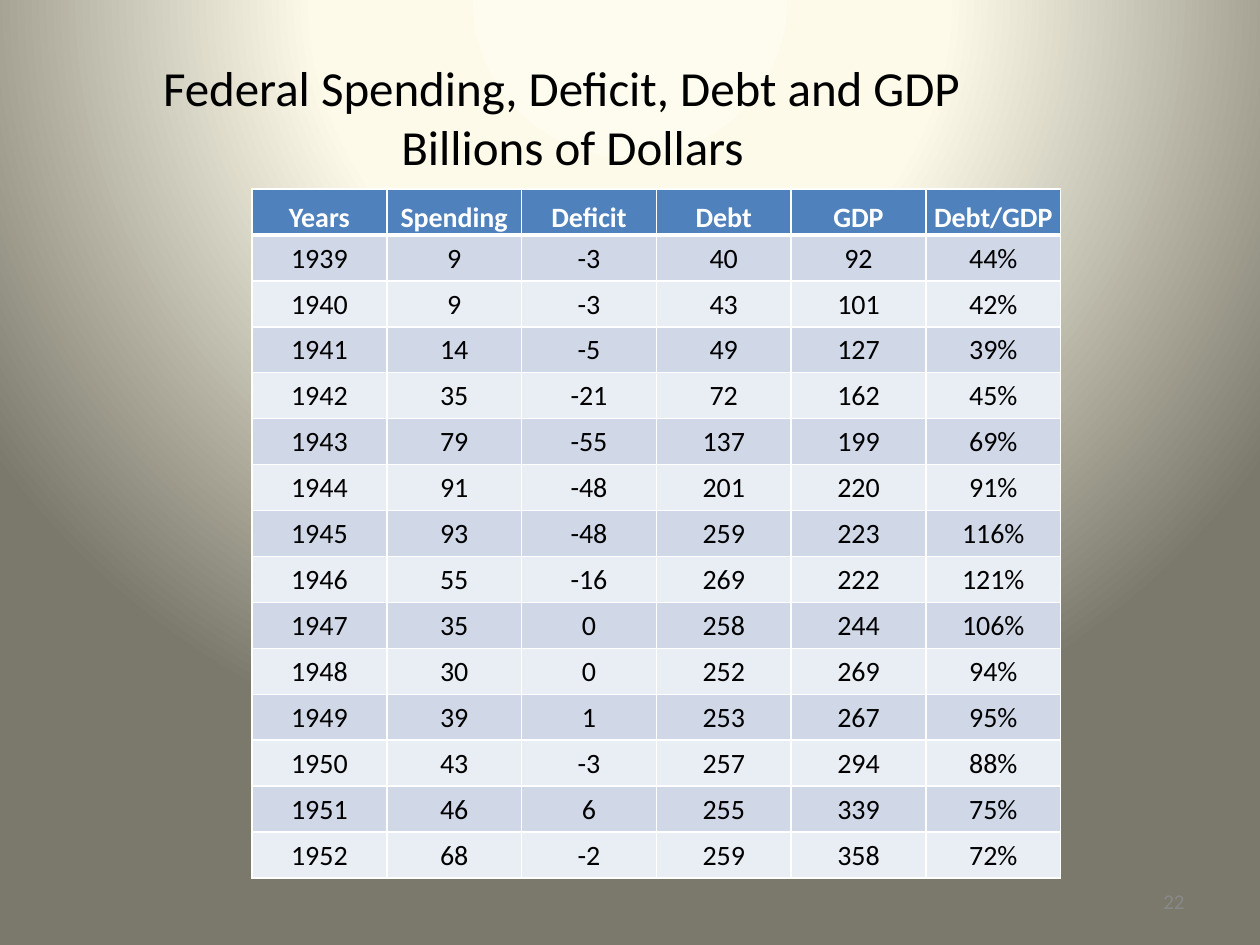
from lxml.etree import SubElement
from pptx import Presentation
from pptx.dml.color import RGBColor
from pptx.enum.text import MSO_ANCHOR, PP_ALIGN
from pptx.oxml import parse_xml
from pptx.oxml.ns import nsdecls, qn
from pptx.util import Inches, Pt

FONT = "Calibri"
COLORS = {
    "text": "000000",
    "header_text": "FFFFFF",
    "header": "4F81BD",
    "band_dark": "D0D8E8",
    "band_light": "E9EDF4",
    "border": "FFFFFF",
    "page_number": "898989",
    "glow": "FEFCEE",
    "glow_edge": "FDFAEA",
    "backdrop": "7B796B",
}
GRADIENT = [(0, "glow"), (40, "glow_edge"), (100, "backdrop")]
TITLE = "Federal Spending, Deficit, Debt and GDP \v Billions of Dollars"
HEADINGS = ["Years", "Spending", "Deficit", "Debt", "GDP", "Debt/GDP"]
BUDGET = [
    (1939, 9, -3, 40, 92, "44%"),
    (1940, 9, -3, 43, 101, "42%"),
    (1941, 14, -5, 49, 127, "39%"),
    (1942, 35, -21, 72, 162, "45%"),
    (1943, 79, -55, 137, 199, "69%"),
    (1944, 91, -48, 201, 220, "91%"),
    (1945, 93, -48, 259, 223, "116%"),
    (1946, 55, -16, 269, 222, "121%"),
    (1947, 35, 0, 258, 244, "106%"),
    (1948, 30, 0, 252, 269, "94%"),
    (1949, 39, 1, 253, 267, "95%"),
    (1950, 43, -3, 257, 294, "88%"),
    (1951, 46, 6, 255, 339, "75%"),
    (1952, 68, -2, 259, 358, "72%"),
]


def rgb(color):
    return RGBColor.from_string(COLORS[color])


def format_text(frame, size, color, align=PP_ALIGN.CENTER, bold=False):
    for paragraph in frame.paragraphs:
        paragraph.alignment = align
        for run in paragraph.runs:
            run.font.name = FONT
            run.font.size = Pt(size)
            run.font.bold = bold
            run.font.color.rgb = rgb(color)


def set_background(slide):
    slide.background.fill.solid()
    backdrop = slide.element.find(".//" + qn("p:bgPr"))
    stops = "".join(
        f'<a:gs pos="{position * 1000}"><a:srgbClr val="{COLORS[color]}"/></a:gs>'
        for position, color in GRADIENT
    )
    gradient = parse_xml(
        f'<a:gradFill {nsdecls("a")} rotWithShape="1"><a:gsLst>{stops}</a:gsLst>'
        '<a:path path="circle">'
        '<a:fillToRect l="50000" t="-80000" r="50000" b="180000"/>'
        "</a:path></a:gradFill>"
    )
    backdrop.replace(backdrop.find(qn("a:solidFill")), gradient)


def add_title(slide):
    title = slide.shapes.title
    title.left, title.top = Inches(0), Inches(0.3)
    title.width, title.height = Inches(9), Inches(1.25)
    title.text_frame.text = TITLE
    title.text_frame.vertical_anchor = MSO_ANCHOR.MIDDLE
    format_text(title.text_frame, 28, "text")


def set_borders(cell, top, bottom):
    properties = cell._tc.get_or_add_tcPr()
    for side, width in (("L", 1), ("R", 1), ("T", top), ("B", bottom)):
        line = SubElement(properties, qn(f"a:ln{side}"), w=str(Pt(width)))
        fill = SubElement(line, qn("a:solidFill"))
        SubElement(fill, qn("a:srgbClr"), val=COLORS["border"])


def fill_cell(cell, value, row):
    is_header = row == 0
    cell.text_frame.text = str(value)
    cell.margin_left = cell.margin_right = cell.margin_top = Inches(0.01)
    cell.margin_bottom = 0
    cell.vertical_anchor = MSO_ANCHOR.BOTTOM if is_header else MSO_ANCHOR.MIDDLE
    text_color = "header_text" if is_header else "text"
    format_text(cell.text_frame, 16, text_color, bold=is_header)
    set_borders(cell, top=3 if row == 1 else 1, bottom=3 if is_header else 1)
    band = "band_dark" if row % 2 else "band_light"
    cell.fill.solid()
    cell.fill.fore_color.rgb = rgb("header" if is_header else band)


def add_budget_table(slide):
    rows = [HEADINGS, *BUDGET]
    width, height = Inches(6.42), Inches(5.47)
    table = slide.shapes.add_table(
        len(rows), len(HEADINGS), Inches(2), Inches(1.5), width, height
    ).table
    for column in table.columns:
        column.width = width // len(HEADINGS)
    for row, values in enumerate(rows):
        table.rows[row].height = height // len(rows)
        for column, value in enumerate(values):
            fill_cell(table.cell(row, column), value, row)


def add_page_number(slide):
    page_number = slide.shapes.add_textbox(
        Inches(7.17), Inches(6.95), Inches(2.33), Inches(0.4)
    )
    frame = page_number.text_frame
    frame.word_wrap = True
    frame.vertical_anchor = MSO_ANCHOR.MIDDLE
    frame.text = "22"
    format_text(frame, 12, "page_number", PP_ALIGN.RIGHT)


def main():
    prs = Presentation()
    prs.slide_width, prs.slide_height = Inches(10), Inches(7.5)
    slide = prs.slides.add_slide(prs.slide_layouts[5])
    set_background(slide)
    add_title(slide)
    add_budget_table(slide)
    add_page_number(slide)
    prs.save("out.pptx")


if __name__ == "__main__":
    main()
